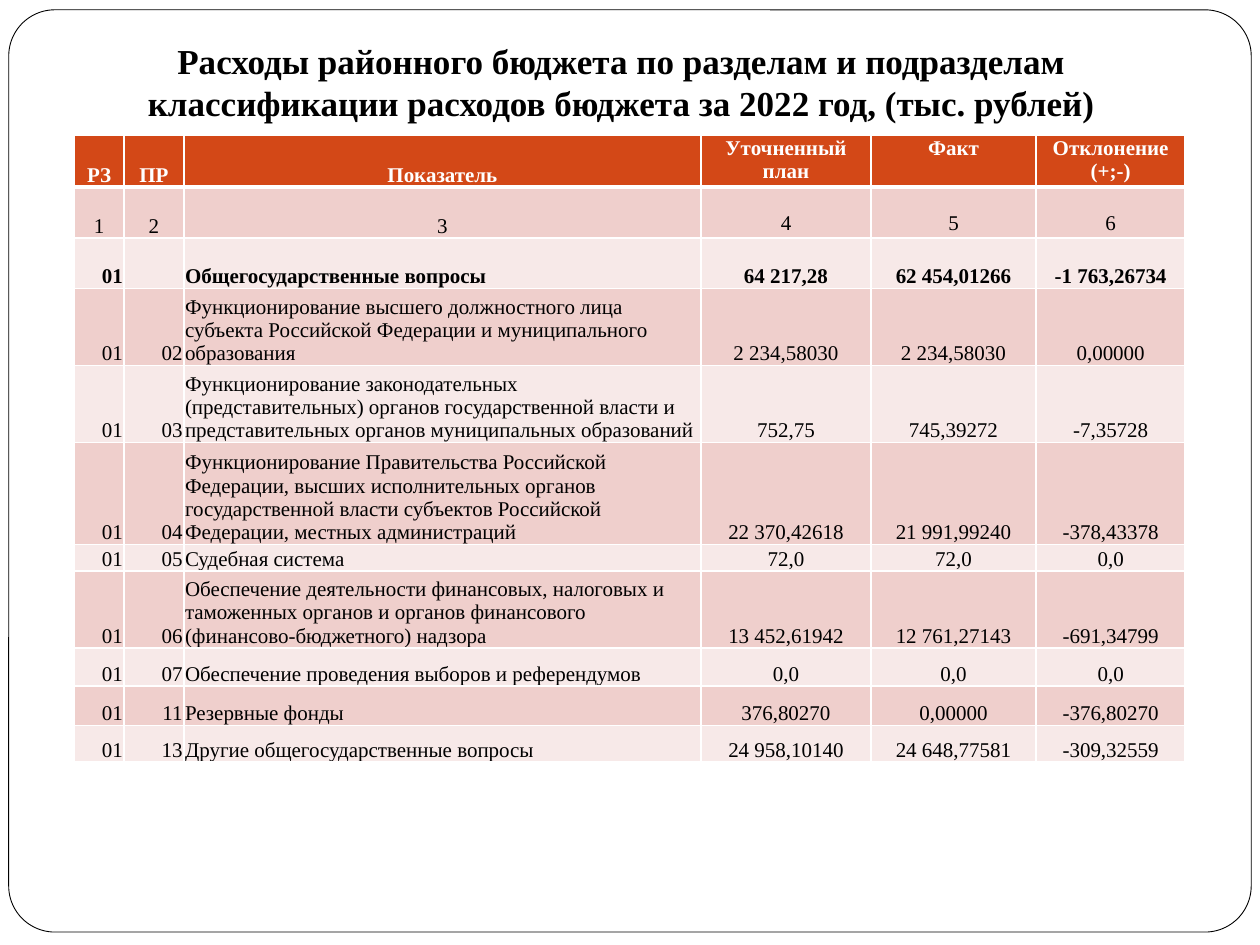
from lxml import etree
from pptx import Presentation
from pptx.dml.color import RGBColor
from pptx.enum.shapes import MSO_SHAPE
from pptx.enum.text import MSO_ANCHOR, PP_ALIGN
from pptx.oxml.ns import qn
from pptx.util import Pt

LEFT, MID, RIGHT = PP_ALIGN.LEFT, PP_ALIGN.CENTER, PP_ALIGN.RIGHT
TOP, BASE = MSO_ANCHOR.TOP, MSO_ANCHOR.BOTTOM
ROUND = MSO_SHAPE.ROUNDED_RECTANGLE

BLACK = RGBColor(0x00, 0x00, 0x00)
WHITE = RGBColor(0xFF, 0xFF, 0xFF)
RUST = RGBColor(0xD3, 0x48, 0x17)
ROSE = RGBColor(0xEF, 0xCF, 0xCC)
PALE = RGBColor(0xF7, 0xE9, 0xE8)
FONT = "Times New Roman"

# Content
TITLE = ("Расходы районного бюджета по разделам и подразделам "
         "классификации расходов бюджета за 2022 год, (тыс. рублей)")
HEAD = ("РЗ", "ПР", "Показатель", "Уточненный план", "Факт", "Отклонение (+;-)")
NUMS = ("1", "2", "3", "4", "5", "6")
TOTAL = ("01", "", "Общегосударственные вопросы",
         "64 217,28", "62 454,01266", "-1 763,26734")
ITEMS = [
    ("01", "02", "Функционирование высшего должностного лица субъекта "
     "Российской Федерации и муниципального образования",
     "2 234,58030", "2 234,58030", "0,00000"),
    ("01", "03", "Функционирование законодательных (представительных) органов "
     "государственной власти и представительных органов муниципальных образований",
     "752,75", "745,39272", "-7,35728"),
    ("01", "04", "Функционирование Правительства Российской Федерации, высших "
     "исполнительных органов государственной власти субъектов Российской "
     "Федерации, местных администраций",
     "22 370,42618", "21 991,99240", "-378,43378"),
    ("01", "05", "Судебная система", "72,0", "72,0", "0,0"),
    ("01", "06", "Обеспечение деятельности финансовых, налоговых и таможенных "
     "органов и органов финансового (финансово-бюджетного) надзора",
     "13 452,61942", "12 761,27143", "-691,34799"),
    ("01", "07", "Обеспечение проведения выборов и референдумов",
     "0,0", "0,0", "0,0"),
    ("01", "11", "Резервные фонды", "376,80270", "0,00000", "-376,80270"),
    ("01", "13", "Другие общегосударственные вопросы",
     "24 958,10140", "24 648,77581", "-309,32559"),
]
ROWS = [HEAD, NUMS, TOTAL, *ITEMS]
WIDTHS = (28.4, 34.2, 295.6, 97, 94.5, 85.2)
HEIGHTS = (29.5, 29, 29, 43.3, 43.3, 57.5, 15.3, 43.3, 21.8, 22.6, 20.8)
ALIGNS = (RIGHT, RIGHT, LEFT, MID, MID, MID)


def write(frame, text, size=12, color=BLACK, bold=False, align=MID):
    para = frame.paragraphs[0]
    para.alignment = align
    para.font.size = Pt(size)
    run = para.add_run()
    run.text = text
    font = run.font
    font.name, font.size, font.bold = FONT, Pt(size), bold
    font.color.rgb = color


def edge(cell, side, width):
    """Add a white border line to one side of a cell."""
    props = cell._tc.get_or_add_tcPr()
    line = etree.SubElement(props, qn(f"a:ln{side}"), w=str(Pt(width)))
    fill = etree.SubElement(line, qn("a:solidFill"))
    etree.SubElement(fill, qn("a:srgbClr"), val=str(WHITE))


deck = Presentation()
deck.slide_width, deck.slide_height = Pt(720), Pt(540)
slide = deck.slides.add_slide(deck.slide_layouts[6])

# Rounded frame
frame = slide.shapes.add_shape(ROUND, Pt(5), Pt(5.6), Pt(710), Pt(527))
frame.shadow.inherit = False
frame.adjustments[0] = 0.05
frame.fill.solid()
frame.fill.fore_color.rgb = WHITE
frame.line.color.rgb = BLACK
frame.line.width = Pt(0.5)

# Title
box = slide.shapes.add_textbox(Pt(31), Pt(15), Pt(648), Pt(62.5)).text_frame
box.word_wrap = True
box.vertical_anchor = BASE
box.margin_bottom = Pt(7.2)
write(box, TITLE, size=20, bold=True)

# Budget table
table = slide.shapes.add_table(len(ROWS), len(WIDTHS), Pt(42.5), Pt(77.4),
                               Pt(sum(WIDTHS)), Pt(sum(HEIGHTS))).table
for col, width in zip(table.columns, WIDTHS):
    col.width = Pt(width)
for row, height in zip(table.rows, HEIGHTS):
    row.height = Pt(height)

for r, row in enumerate(ROWS):
    head = r == 0
    for c, text in enumerate(row):
        cell = table.cell(r, c)
        high = r < 2 and c > 2
        cell.vertical_anchor = TOP if high else BASE
        cell.margin_left = cell.margin_right = Pt(0.7)
        cell.margin_top = Pt(14 if high and not head else 0.7)
        cell.margin_bottom = 0
        for side in "LRTB":
            thick = (r, side) in ((0, "B"), (1, "T"))
            edge(cell, side, 3 if thick else 1)
        cell.fill.solid()
        cell.fill.fore_color.rgb = RUST if head else ROSE if r % 2 else PALE
        write(cell.text_frame, text, color=WHITE if head else BLACK,
              bold=row in (HEAD, TOTAL), align=MID if r < 2 else ALIGNS[c])

deck.save("out.pptx")
